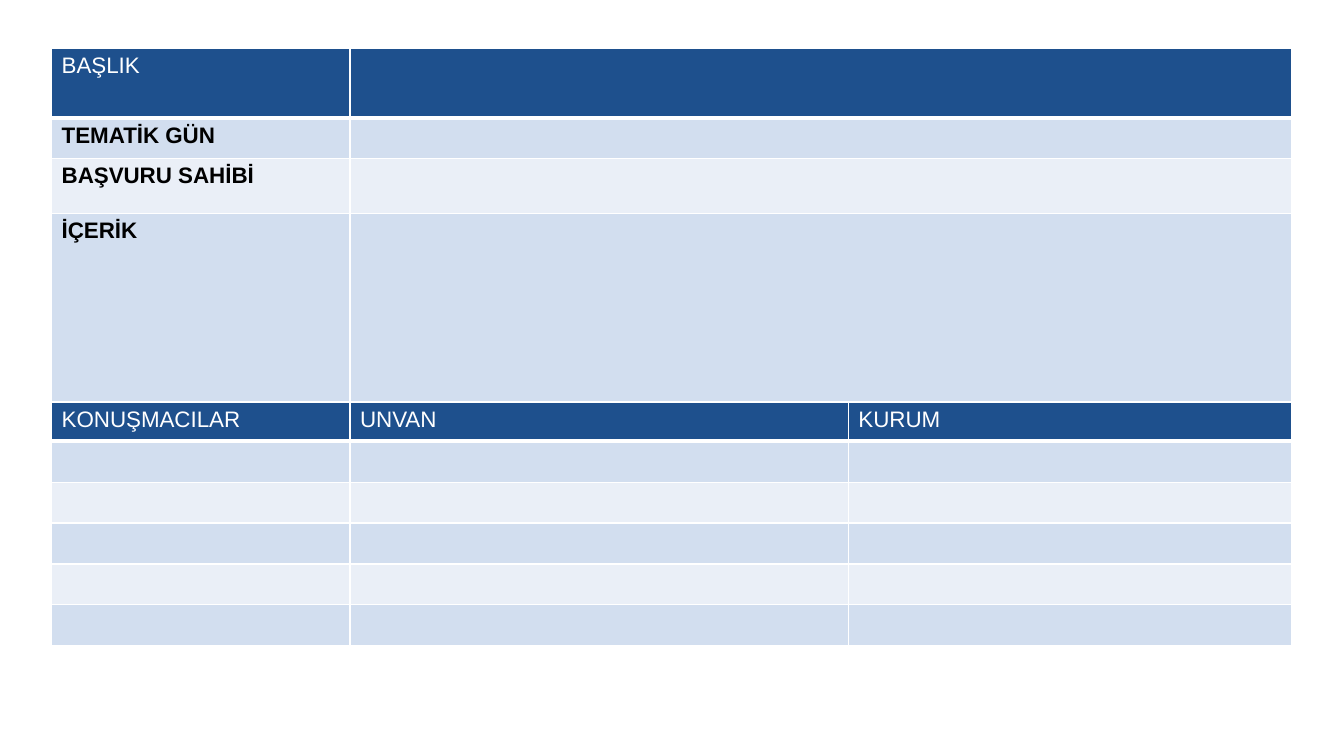
from lxml import etree
from pptx import Presentation
from pptx.dml.color import RGBColor
from pptx.oxml.ns import qn
from pptx.util import Cm, Pt

FONT = "Arial"
SIZE = 16
HEADER, BAND_DARK, BAND_LIGHT = "1E508D", "D2DEEF", "EAEFF7"
WHITE, BLACK = "FFFFFF", "000000"

LEFT, TOP = 1.3, 1.22

# Row heights and column widths in cm
SUMMARY = {
    "cols": [7.52, 23.72],
    "rows": [
        (1.75, ["BAŞLIK", ""]),
        (1.03, ["TEMATİK GÜN", ""]),
        (1.37, ["BAŞVURU SAHİBİ", ""]),
        (4.76, ["İÇERİK", ""]),
    ],
}
SPEAKERS = {
    "cols": [7.52, 12.56, 11.16],
    "rows": [(0.99, ["KONUŞMACILAR", "UNVAN", "KURUM"])]
    + [(1.03, ["", "", ""])] * 5,
}


def rgb(value):
    return RGBColor.from_string(value)


def set_borders(cell, bottom):
    """Draw white cell borders, 1 pt except for the given bottom width."""
    tc_pr = cell._tc.get_or_add_tcPr()
    for side, width in (("L", 1), ("R", 1), ("T", 1), ("B", bottom)):
        ln = etree.SubElement(tc_pr, qn(f"a:ln{side}"), w=str(Pt(width)))
        fill = etree.SubElement(ln, qn("a:solidFill"))
        etree.SubElement(fill, qn("a:srgbClr"), val=WHITE)


def fill_cell(cell, text, row):
    is_header = row == 0
    set_borders(cell, 3 if is_header else 1)
    band = BAND_DARK if row % 2 else BAND_LIGHT
    cell.fill.solid()
    cell.fill.fore_color.rgb = rgb(HEADER if is_header else band)
    if text:
        r = cell.text_frame.paragraphs[0].add_run()
        r.text = text
        r.font.name = FONT
        r.font.size = Pt(SIZE)
        r.font.bold = not is_header
        r.font.color.rgb = rgb(WHITE if is_header else BLACK)


def add_grid(s, grid, top):
    """Add one table and return its bottom edge in cm."""
    cols, rows = grid["cols"], grid["rows"]
    height = sum(h for h, _ in rows)
    table = s.shapes.add_table(len(rows), len(cols), Cm(LEFT), Cm(top),
                               Cm(sum(cols)), Cm(height)).table
    for column, width in zip(table.columns, cols):
        column.width = Cm(width)
    for i, (row_height, texts) in enumerate(rows):
        table.rows[i].height = Cm(row_height)
        for j, text in enumerate(texts):
            fill_cell(table.cell(i, j), text, i)
    return top + height


def main():
    prs = Presentation()
    prs.slide_width, prs.slide_height = Cm(33.87), Cm(19.05)
    s = prs.slides.add_slide(prs.slide_layouts[6])
    top = TOP
    for grid in (SUMMARY, SPEAKERS):
        top = add_grid(s, grid, top)
    prs.save("out.pptx")


if __name__ == "__main__":
    main()
